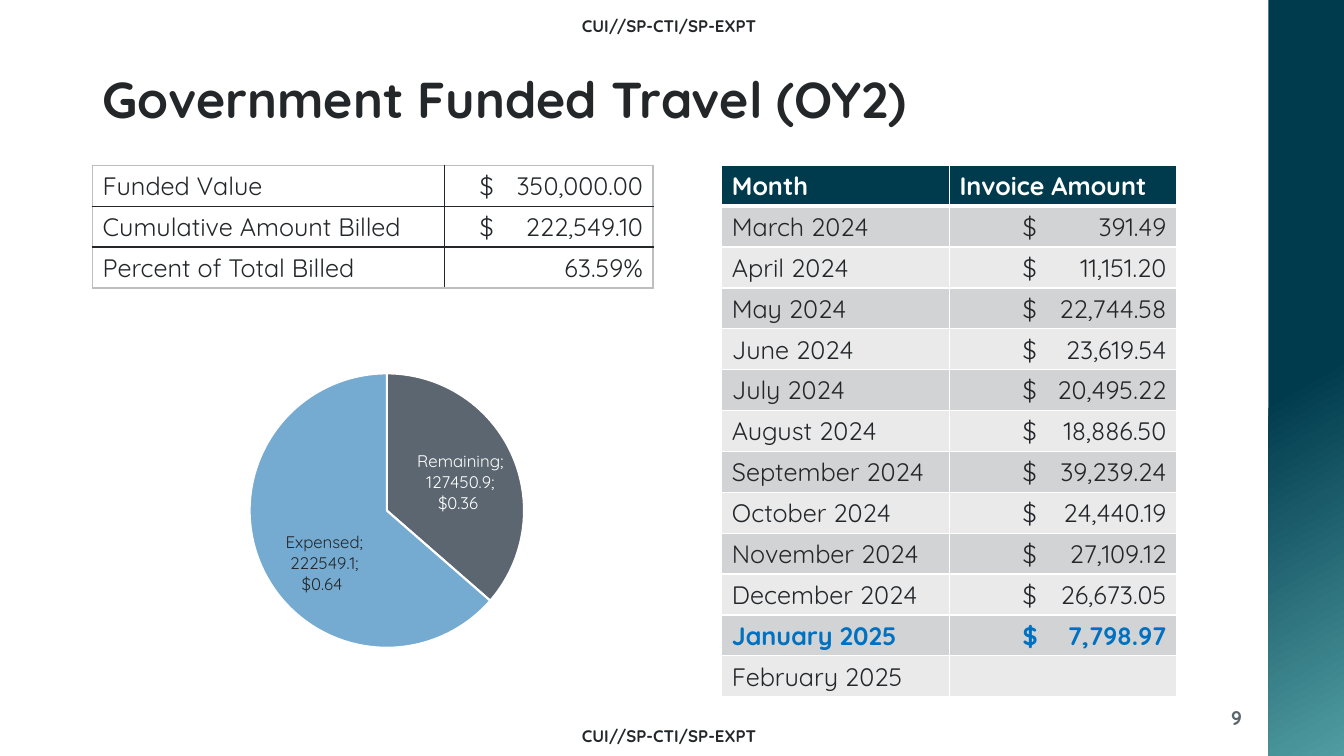
from lxml import etree
from pptx import Presentation
from pptx.chart.data import CategoryChartData
from pptx.dml.color import RGBColor
from pptx.enum.chart import XL_CHART_TYPE, XL_LABEL_POSITION
from pptx.enum.shapes import MSO_SHAPE
from pptx.enum.text import MSO_ANCHOR, PP_ALIGN
from pptx.oxml import parse_xml
from pptx.oxml.ns import nsdecls, qn
from pptx.util import Pt

# Content
MARKING = "CUI//SP-CTI/SP-EXPT"
TITLE = "Government Funded Travel (OY2)"
PAGE_NUMBER = "9"
SUMMARY = [
    ("Funded Value", "$350,000.00"),
    ("Cumulative Amount Billed", "$222,549.10"),
    ("Percent of Total Billed", "63.59%"),
]
INVOICE_HEAD = ("Month", "Invoice Amount")
INVOICES = [
    ("March 2024", "$391.49"),
    ("April 2024", "$11,151.20"),
    ("May 2024", "$22,744.58"),
    ("June 2024", "$23,619.54"),
    ("July 2024", "$20,495.22"),
    ("August 2024", "$18,886.50"),
    ("September 2024", "$39,239.24"),
    ("October 2024", "$24,440.19"),
    ("November 2024", "$27,109.12"),
    ("December 2024", "$26,673.05"),
    ("January 2025", "$7,798.97"),
    ("February 2025", ""),
]
CURRENT_MONTH = "January 2025"
# Name, value, slice colour, label colour, label shift (fraction of the chart)
SLICES = [
    ("Remaining", 127450.90, "slate", "white", (0.02, 0)),
    ("Expensed", 222549.10, "sky", "ink", (0, 0.065)),
]

THEME = {
    "font": "Quicksand",
    "ink": "24272A", "white": "FFFFFF", "navy": "003B4D", "teal": "509CA2",
    "slate": "5B6670", "sky": "75ABD1", "blue": "0070C0", "frame": "BDBEBF",
    "bands": ("D2D3D5", "EAEAEB"),
    "title": 36, "table": 18, "number": 14, "small": 12,
}

# Geometry in points
WIDTH, HEIGHT = 960, 540
LEFT, CONTENT_WIDTH = 66.2, 400.3
TABLE_TOP, ROW_HEIGHT = 118.1, 29.2
INSET = 7.2


def color(value):
    return RGBColor.from_string(value)


def write(para, text, size, ink=THEME["ink"], bold=False, align=PP_ALIGN.LEFT):
    para.alignment = align
    span = para.add_run()
    span.text = text
    font = span.font
    font.name, font.size, font.bold = THEME["font"], Pt(size), bold
    font.color.rgb = color(ink)


def add_text(page, place, text, size, anchor=MSO_ANCHOR.TOP, **style):
    frame = page.shapes.add_textbox(*map(Pt, place)).text_frame
    frame.word_wrap = True
    frame.vertical_anchor = anchor
    write(frame.paragraphs[0], text, size, **style)
    return frame.paragraphs[0]


def set_borders(cell, **sides):
    """Give each side (L, R, T, B) a colour and a width in points."""
    properties = cell._tc.get_or_add_tcPr()
    for index, side in enumerate("LRTB"):
        ink, width = sides[side]
        properties.insert(index, parse_xml(
            f'<a:ln{side} {nsdecls("a")} w="{Pt(width)}"><a:solidFill>'
            f'<a:srgbClr val="{ink}"/></a:solidFill></a:ln{side}>'))


def add_grid(page, left, columns, row_count):
    grid = page.shapes.add_table(
        row_count, len(columns), Pt(left), Pt(TABLE_TOP),
        Pt(sum(columns)), Pt(ROW_HEIGHT * row_count)).table
    grid.first_row = grid.horz_banding = False
    for column, width in zip(grid.columns, columns):
        column.width = Pt(width)
    for row in grid.rows:
        row.height = Pt(ROW_HEIGHT)
    return grid


def write_amount(para, text, dollar_at, right_at, **style):
    """Put the dollar sign and the figure on two tab stops."""
    if not text.startswith("$"):
        write(para, text, THEME["table"], align=PP_ALIGN.RIGHT, **style)
        return
    stops = etree.SubElement(para._p.get_or_add_pPr(), qn("a:tabLst"))
    for position, kind in ((dollar_at, "l"), (right_at, "r")):
        etree.SubElement(stops, qn("a:tab"), pos=str(Pt(position)), algn=kind)
    write(para, f"\t$\t{text[1:]}", THEME["table"], **style)


def add_summary(page):
    columns = (251.3, 149)
    grid = add_grid(page, LEFT, columns, len(SUMMARY))
    inner, outer = (THEME["ink"], 1), (THEME["frame"], 1)
    last = len(SUMMARY) - 1
    for index, (label, amount) in enumerate(SUMMARY):
        name_cell, amount_cell = grid.rows[index].cells
        top = outer if index == 0 else inner
        bottom = outer if index == last else inner
        for cell, start, end in ((name_cell, outer, inner), (amount_cell, inner, outer)):
            cell.fill.background()
            set_borders(cell, L=start, R=end, T=top, B=bottom)
        write(name_cell.text_frame.paragraphs[0], label, THEME["table"])
        write_amount(amount_cell.text_frame.paragraphs[0], amount,
                     18, columns[1] - 2 * INSET)


def add_invoices(page):
    columns = (162.6, 162.2)
    grid = add_grid(page, 515.6, columns, len(INVOICES) + 1)
    thin, thick = (THEME["white"], 1), (THEME["white"], 3)
    for index, values in enumerate([INVOICE_HEAD] + INVOICES):
        head, current = index == 0, values[0] == CURRENT_MONTH
        fill = THEME["navy"] if head else THEME["bands"][(index - 1) % 2]
        ink = THEME["white" if head else "blue" if current else "ink"]
        style = {"ink": ink, "bold": head or current}
        for cell, text, is_amount in zip(grid.rows[index].cells, values, (False, True)):
            cell.fill.solid()
            cell.fill.fore_color.rgb = color(fill)
            set_borders(cell, L=thin, R=thin, T=thick if index == 1 else thin,
                        B=thick if head else thin)
            para = cell.text_frame.paragraphs[0]
            if is_amount and not head:
                write_amount(para, text, 45, columns[1] - 2 * INSET, **style)
            else:
                write(para, text, THEME["table"], **style)


def manual_layout(extra="", **numbers):
    values = "".join(f'<c:{key} val="{value}"/>' for key, value in numbers.items())
    return parse_xml(f'<c:layout {nsdecls("c")}><c:manualLayout>{extra}{values}'
                     '</c:manualLayout></c:layout>')


def add_pie(page):
    data = CategoryChartData()
    data.categories = [item[0] for item in SLICES]
    data.add_series("Series 1", [item[1] for item in SLICES])
    chart = page.shapes.add_chart(
        XL_CHART_TYPE.PIE, Pt(LEFT), Pt(227.5), Pt(CONTENT_WIDTH), Pt(261.4), data).chart
    chart.has_legend = chart.has_title = False
    chart.font.name, chart.font.size = THEME["font"], Pt(10)
    chart.font.color.rgb = color(THEME["ink"])
    plot = chart.plots[0]
    plot.vary_by_categories = True

    # Slices and their labels
    for index, (_, _, fill, ink, shift) in enumerate(SLICES):
        point = plot.series[0].points[index]
        point.format.fill.solid()
        point.format.fill.fore_color.rgb = color(THEME[fill])
        point.format.line.color.rgb = color(THEME["white"])
        point.format.line.width = Pt(1.5)
        label = point.data_label
        label.font.name, label.font.size = THEME["font"], Pt(THEME["small"])
        label.font.color.rgb = color(THEME[ink])
        label.position = XL_LABEL_POSITION.CENTER
        node = plot.series[0]._element.findall(".//" + qn("c:dLbl"))[index]
        node.insert(1, manual_layout(x=shift[0], y=shift[1]))
        number_format = etree.Element(
            qn("c:numFmt"), formatCode='"$"#,##0.00_)', sourceLinked="0")
        node.insert(2, number_format)
        for flag in ("showVal", "showCatName", "showPercent"):
            node.find(qn("c:" + flag)).set("val", "1")
        etree.SubElement(node, qn("c:separator")).text = "; "

    # Place of the pie inside the chart
    area = chart._chartSpace.find(".//" + qn("c:plotArea"))
    for layout in area.findall(qn("c:layout")):
        area.remove(layout)
    area.insert(0, manual_layout(
        '<c:layoutTarget val="inner"/><c:xMode val="edge"/><c:yMode val="edge"/>',
        x=0.28, y=0.15, w=0.49, h=0.75))


def main():
    deck = Presentation()
    deck.slide_width, deck.slide_height = Pt(WIDTH), Pt(HEIGHT)
    page = deck.slides.add_slide(deck.slide_layouts[6])

    # Side band
    band = page.shapes.add_shape(MSO_SHAPE.RECTANGLE, Pt(906), 0, Pt(54), Pt(HEIGHT))
    band.shadow.inherit = False
    band.line.fill.background()
    band.fill.gradient()
    band.fill.gradient_angle = 300
    for stop, position, ink in zip(band.fill.gradient_stops, (0.5, 1), ("navy", "teal")):
        stop.position = position
        stop.color.rgb = color(THEME[ink])

    # Markings, title and page number
    for top in (7.9, 514.8):
        add_text(page, (142, top, 672, 17.3), MARKING, THEME["small"],
                 bold=True, align=PP_ALIGN.CENTER)
    title = add_text(page, (LEFT, 26.6, 828, 69.1), TITLE, THEME["title"],
                     anchor=MSO_ANCHOR.BOTTOM, bold=True)
    title.line_spacing = 0.9
    add_text(page, (828, 500.4, 66.2, 28.8), PAGE_NUMBER, THEME["number"],
             ink=THEME["slate"], bold=True, align=PP_ALIGN.RIGHT)

    add_summary(page)
    add_invoices(page)
    add_pie(page)
    deck.save("out.pptx")


if __name__ == "__main__":
    main()
